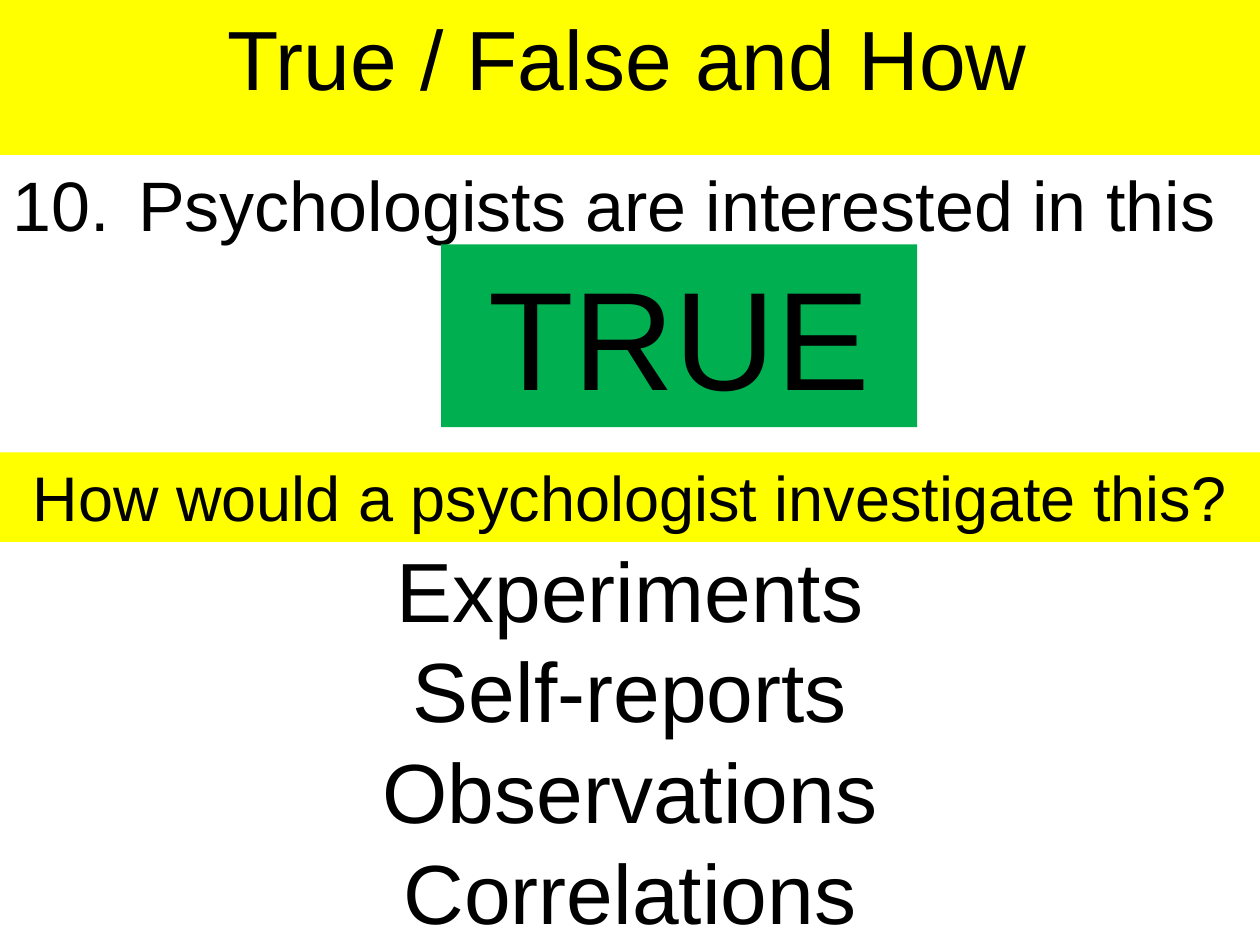
import pptx
import pptx.util
import pptx.dml.color
import pptx.enum.shapes
import pptx.enum.text
import lxml.etree

Inches = pptx.util.Inches
RGBColor = pptx.dml.color.RGBColor
ALIGN = pptx.enum.text.PP_ALIGN

YELLOW = RGBColor(0xFF, 0xFF, 0x00)
GREEN = RGBColor(0x00, 0xB0, 0x50)
BLACK = RGBColor(0x00, 0x00, 0x00)
FONT = "Arial"
METHODS = ["Experiments", "Self-reports", "Observations", "Correlations"]


def place(shape, left, top, width, height):
    shape.left, shape.top = Inches(left), Inches(top)
    shape.width, shape.height = Inches(width), Inches(height)


def write(shape, lines, size, align=ALIGN.CENTER):
    frame = shape.text_frame
    frame.word_wrap = True
    frame.auto_size = pptx.enum.text.MSO_AUTO_SIZE.NONE
    frame.vertical_anchor = pptx.enum.text.MSO_ANCHOR.TOP
    for index, line in enumerate(lines):
        paragraph = frame.add_paragraph() if index else frame.paragraphs[0]
        paragraph.alignment = align
        paragraph.space_before = pptx.util.Pt(0)
        run = paragraph.add_run()
        run.text = line
        run.font.name = FONT
        run.font.size = pptx.util.Pt(size)
        run.font.color.rgb = BLACK


def fill_with(shape, color):
    shape.fill.solid()
    shape.fill.fore_color.rgb = color


def add_title(slide, text):
    title = slide.shapes.title
    place(title, -0.04, 0, 10.04, 1.23)
    fill_with(title, YELLOW)
    write(title, [text], 48)


def add_statement(slide, text):
    statement = slide.shapes.add_textbox(Inches(0), Inches(1.23), Inches(10), Inches(0.77))
    write(statement, [text], 40, ALIGN.LEFT)


def add_banner(slide, text, box, color, size):
    banner = slide.shapes.add_shape(
        pptx.enum.shapes.MSO_SHAPE.RECTANGLE, *map(Inches, box))
    banner.shadow.inherit = False
    banner.line.fill.background()
    fill_with(banner, color)
    write(banner, [text], size)


def add_methods(slide, methods):
    answers = slide.placeholders[1]
    place(answers, 0, 4.22, 10, 3.28)
    write(answers, methods, 48)
    for paragraph in answers.text_frame.paragraphs:
        properties = paragraph._p.get_or_add_pPr()
        properties.set("marL", "0")
        properties.set("indent", "0")
        lxml.etree.SubElement(properties, pptx.oxml.ns.qn("a:buNone"))


def main():
    presentation = pptx.Presentation()
    presentation.slide_width = Inches(10)
    presentation.slide_height = Inches(7.5)
    slide = presentation.slides.add_slide(presentation.slide_layouts[1])
    add_title(slide, "True / False and How")
    add_statement(slide, "10.\tPsychologists are interested in this")
    add_banner(slide, "TRUE", (3.5, 1.94, 3.78, 1.45), GREEN, 80)
    add_banner(slide, "How would a psychologist investigate this?",
               (0, 3.59, 10, 0.71), YELLOW, 36)
    add_methods(slide, METHODS)
    presentation.save("out.pptx")


if __name__ == "__main__":
    main()
